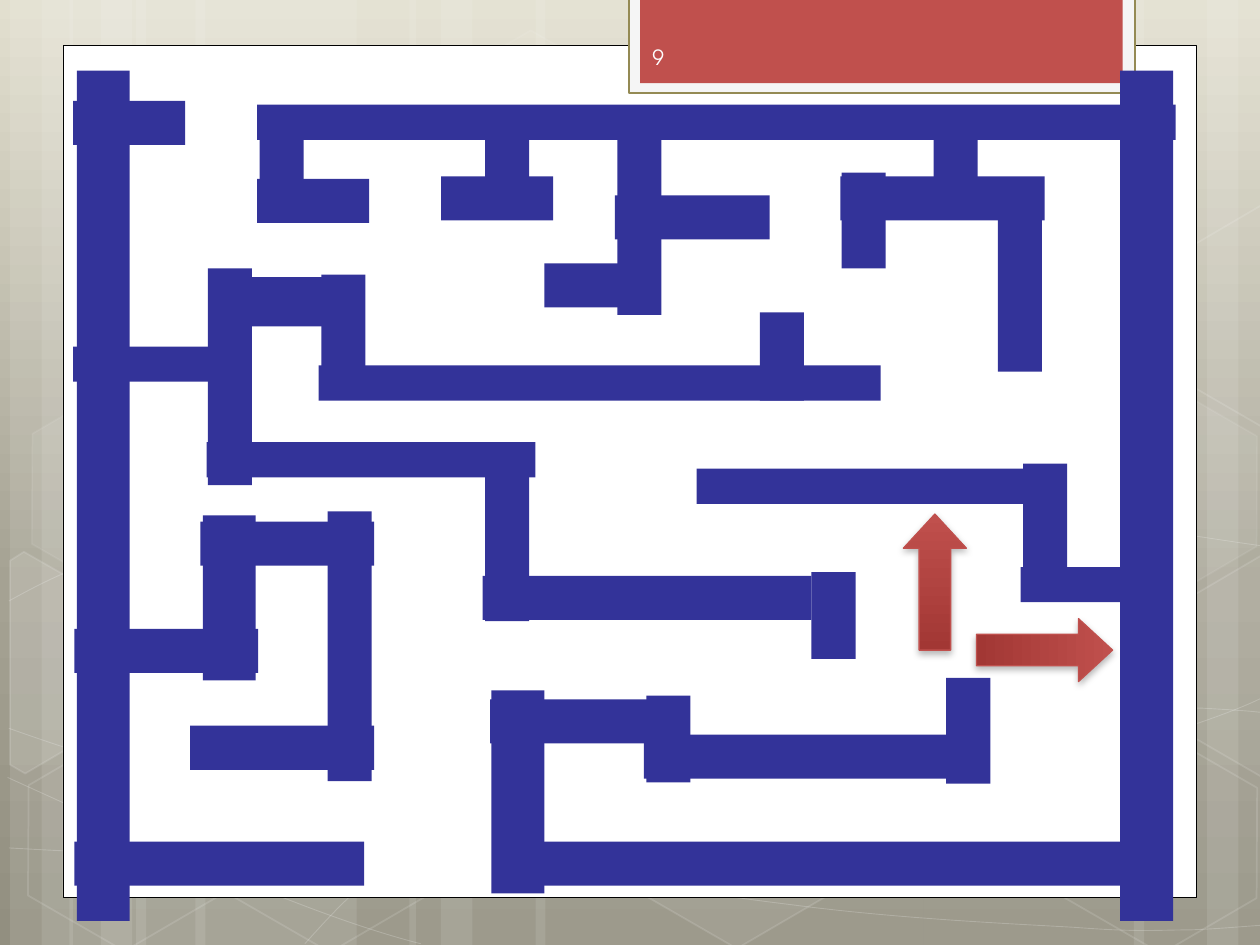
from copy import deepcopy
from dataclasses import dataclass

from lxml import etree
from pptx import Presentation
from pptx.dml.color import RGBColor
from pptx.enum.shapes import MSO_SHAPE
from pptx.enum.text import MSO_ANCHOR
from pptx.oxml.ns import qn
from pptx.util import Inches, Pt

RECTANGLE = MSO_SHAPE.RECTANGLE
HEXAGON = MSO_SHAPE.HEXAGON
UP_ARROW = MSO_SHAPE.UP_ARROW
MIDDLE = MSO_ANCHOR.MIDDLE


@dataclass(frozen=True)
class Theme:
    backdrop: tuple = ((0, "E2DFCF"), (0.62, "A5A293"), (1, "928F80"))
    arrow: tuple = ((0, "C0504D"), (1, "A23734"))
    white: str = "FFFFFF"
    black: str = "000000"
    wall: str = "333399"
    tab: str = "F5F5F5"
    tab_edge: str = "948A54"
    accent: str = "C0504D"
    number: str = "FEFEFE"
    font: str = "TeX Gyre Adventor"
    number_size: int = 12


THEME = Theme()

BANDS = [(1.08, 1.75), (0.08, 0.5), (0.33, 0.83), (1.55, 1.75), (0.55, 0.5), (0.8, 0.83),
         (7.33, 1.75), (9.58, 0.5), (9, 0.83), (4.25, 3.08), (3.25, 0.5), (3.5, 0.83)]

CURVES = [
    [(0.07, 6.73), (0.61, 6.76), (1.15, 6.79), (1.9, 6.78), (2.65, 6.77), (3.58, 6.75),
     (4.58, 6.65), (5.58, 6.55), (7, 6.36), (7.92, 6.17), (8.83, 5.98), (9.77, 5.68), (10.07, 5.51)],
    [(0.07, 4.77), (0.36, 4.61), (0.65, 4.46), (1.21, 4.31), (1.78, 4.16), (2.59, 3.94),
     (3.47, 3.87), (4.36, 3.8), (5.44, 3.79), (6.54, 3.87), (7.64, 3.95), (9.47, 4.26), (10.07, 4.34)],
    [(0.06, 6.17), (1.27, 6.72), (2.47, 7.27), (3.34, 7.49)],
    [(0.07, 5.78), (0.38, 5.89), (0.7, 6), (1.28, 6.16), (1.86, 6.31), (2.73, 6.56),
     (3.57, 6.73), (4.4, 6.9), (5.45, 7.08), (6.28, 7.18), (7.11, 7.29), (8, 7.33),
     (8.53, 7.36), (9.05, 7.4), (9.19, 7.38), (9.45, 7.38), (9.71, 7.37), (9.89, 7.35), (10.07, 7.34)],
    [(2.42, 7.49), (2.6, 7.29), (2.78, 7.09), (3.02, 6.91), (3.26, 6.73), (3.6, 6.53),
     (3.88, 6.39), (4.16, 6.25), (4.33, 6.19), (4.7, 6.09), (5.06, 5.99), (5.73, 5.85),
     (6.08, 5.78), (6.44, 5.71), (6.49, 5.71), (6.8, 5.69), (7.11, 5.66), (7.6, 5.63),
     (7.94, 5.62), (8.29, 5.61), (8.86, 5.62), (8.86, 5.62), (8.9, 5.62), (9.5, 5.62),
     (9.53, 5.62), (9.71, 5.63), (9.88, 5.64), (9.97, 5.65), (10.06, 5.66), (10.03, 5.65), (10.06, 5.66)],
]

HEXAGONS = [(3.34, 0.36, 4, 8), (4.97, 5.89, 6, 12), (0.11, 5.91, 0, 12), (0.14, 3.12, 7, 8),
            (1.74, 5.92, 0, 12), (7.53, 4.53, 10, 12), (8.34, 5.93, 0, 12), (8.34, 3.14, 7, 8)]

CUT_HEXAGONS = [
    ([(0.08, 4.45), (0.19, 4.38), (0.96, 4.82), (0.95, 5.7), (0.2, 6.14), (0.08, 6.07)], 10),
    ([(9.26, 4.85), (10.01, 4.41), (10.09, 4.46), (10.09, 6.13), (10.02, 6.17), (9.26, 5.73)], 4),
    ([(9.26, 2.07), (10.01, 1.63), (10.1, 1.68), (10.09, 3.35), (10.02, 3.39), (9.26, 2.95)], 0),
]

ACROSS = {
    0.35: [(0.59, 6.68, 2.3), (3.83, 4.57, 2.61), (0.59, 4.99, 1.46), (1.59, 4.14, 1.38),
           (1.51, 5.76, 1.46), (3.89, 5.55, 1.53), (4.12, 6.68, 5.14), (4.32, 2.09, 0.89),
           (5.11, 5.83, 2.61), (4.88, 1.55, 1.23), (3.5, 1.4, 0.89), (2.04, 1.42, 0.89),
           (0.58, 0.8, 0.89), (6.67, 1.4, 1.62)],
    0.28: [(2.53, 2.9, 4.46), (5.53, 3.72, 2.76), (2.04, 0.83, 7.29), (0.58, 2.75, 1.38),
           (1.64, 3.51, 2.61), (8.1, 4.5, 1.15)],
    0.39: [(1.74, 2.2, 1.12)],
}

DOWN = {
    0.35: [(6.44, 4.54, 0.69), (7.51, 5.38, 0.84), (6.68, 1.37, 0.76), (2.55, 2.18, 0.97),
           (1.65, 2.13, 1.72), (3.85, 3.67, 1.26), (2.6, 4.06, 2.14), (2.06, 0.92, 0.69),
           (7.41, 0.92, 0.65), (7.92, 1.56, 1.39), (5.13, 5.52, 0.69), (8.12, 3.68, 0.99),
           (6.03, 2.48, 0.7), (4.9, 0.95, 1.55), (3.85, 1.06, 0.65)],
    0.42: [(8.89, 0.56, 6.75), (0.61, 0.56, 6.75), (1.61, 4.09, 1.31), (3.9, 5.48, 1.61)],
}


def paint(color_format, color, opacity=100):
    color_format.rgb = RGBColor.from_string(color)
    if opacity < 100:
        tint = color_format._xFill.find(qn("a:srgbClr"))
        etree.SubElement(tint, qn("a:alpha"), val=str(opacity * 1000))


def style(shape, fill=None, opacity=100, line=None, weight=1, line_opacity=100):
    shape.shadow.inherit = False
    if fill and opacity:
        shape.fill.solid()
        paint(shape.fill.fore_color, fill, opacity)
    else:
        shape.fill.background()
    if line:
        shape.line.width = Pt(weight)
        shape.line.fill.solid()
        paint(shape.line.fill.fore_color, line, line_opacity)
    else:
        shape.line.fill.background()


def add_preset(slide, kind, box, **look):
    shape = slide.shapes.add_shape(kind, *map(Inches, box))
    style(shape, **look)
    return shape


def add_outline(slide, points, close, **look):
    hundredths = [(round(x * 100), round(y * 100)) for x, y in points]
    builder = slide.shapes.build_freeform(*hundredths[0], scale=Inches(0.01))
    builder.add_line_segments(hundredths[1:], close=close)
    outline = builder.convert_to_shape()
    style(outline, **look)
    return outline


def bend(outline):
    segments = list(outline.element.iter(qn("a:lnTo")))
    for start in range(0, len(segments), 3):
        curve = etree.SubElement(segments[start].getparent(), qn("a:cubicBezTo"))
        for segment in segments[start:start + 3]:
            curve.append(segment[0])
            segment.getparent().remove(segment)


def set_gradient(fill, owner, colors):
    fill.gradient()
    fill.gradient_angle = 270
    stops = owner.find(".//" + qn("a:gsLst"))
    for _ in range(len(colors) - len(stops)):
        stops.append(deepcopy(stops[-1]))
    for stop, (position, color) in zip(fill.gradient_stops, colors):
        stop.position = position
        stop.color.rgb = RGBColor.from_string(color)


def add_backdrop(slide, height):
    set_gradient(slide.background.fill, slide.element, THEME.backdrop)
    for left, width in BANDS:
        add_preset(slide, RECTANGLE, (left, 0, width, height), fill=THEME.white, opacity=10)
    for knots in CURVES:
        bend(add_outline(slide, knots, False, line=THEME.white, weight=0.5, line_opacity=20))
    for left, top, opacity, edge in HEXAGONS:
        hexagon = add_preset(slide, HEXAGON, (left, top, 1.75, 1.52), fill=THEME.white,
                             opacity=opacity, line=THEME.white, line_opacity=edge)
        hexagon.adjustments[0] = 0.285
        hexagon.rotation = 30
    for corners, opacity in CUT_HEXAGONS:
        add_outline(slide, corners, True, fill=THEME.white, opacity=opacity,
                    line=THEME.white, line_opacity=12)
    add_preset(slide, RECTANGLE, (0.5, 0.36, 9, 6.76), fill=THEME.white, line=THEME.black, weight=0.5)


def add_tab(slide, left, top, width, height):
    add_preset(slide, RECTANGLE, (left, top, width, height), fill=THEME.tab,
               line=THEME.tab_edge, weight=1.25)
    add_preset(slide, RECTANGLE, (left + 0.09, top, width - 0.19, height - 0.08), fill=THEME.accent)


def move_to_layout(slide):
    layout = slide.slide_layout
    for placeholder in list(layout.placeholders):
        placeholder.element.getparent().remove(placeholder.element)
    for shape in list(slide.shapes):
        layout.element.cSld.spTree.append(shape.element)


def add_number(slide, left, top, width, height):
    number = slide.shapes.add_textbox(*map(Inches, (left, top, width, height))).text_frame
    number.word_wrap = True
    number.vertical_anchor = MIDDLE
    run = number.paragraphs[0].add_run()
    run.text = "9"
    run.font.name = THEME.font
    run.font.size = Pt(THEME.number_size)
    run.font.color.rgb = RGBColor.from_string(THEME.number)


def add_maze(slide, left, top):
    boxes = [(x, y, length, thick) for thick, walls in ACROSS.items() for x, y, length in walls]
    boxes += [(x, y, thick, length) for thick, walls in DOWN.items() for x, y, length in walls]
    for x, y, width, height in boxes:
        add_preset(slide, RECTANGLE, (left + x, top + y, width, height), fill=THEME.wall)


def add_arrow(slide, left, top, width, height, rotation):
    arrow = add_preset(slide, UP_ARROW, (left, top, width, height), line=THEME.accent, weight=0.75)
    arrow.adjustments[0] = 0.5
    arrow.adjustments[1] = 0.542
    arrow.rotation = rotation
    properties = arrow.element.spPr
    set_gradient(arrow.fill, properties, THEME.arrow)
    shadow = etree.SubElement(properties.find(qn("a:effectLst")), qn("a:outerShdw"),
                              blurRad=str(Pt(4)), dist=str(Pt(2)), dir="5400000", rotWithShape="0")
    tint = etree.SubElement(shadow, qn("a:srgbClr"), val=THEME.black)
    etree.SubElement(tint, qn("a:alpha"), val="28000")


def main():
    deck = Presentation()
    deck.slide_width, deck.slide_height = Inches(10), Inches(7.5)
    slide = deck.slides.add_slide(deck.slide_layouts[6])
    add_backdrop(slide, 7.5)
    add_tab(slide, 4.99, -0.02, 4.02, 0.76)
    move_to_layout(slide)
    add_number(slide, 5.08, 0.25, 1.46, 0.4)
    add_maze(slide, 0, 0)
    add_arrow(slide, 8.04, 4.62, 0.5, 1.08, 90)
    add_arrow(slide, 7.17, 4.08, 0.5, 1.08, 0)
    deck.save("out.pptx")


if __name__ == "__main__":
    main()
